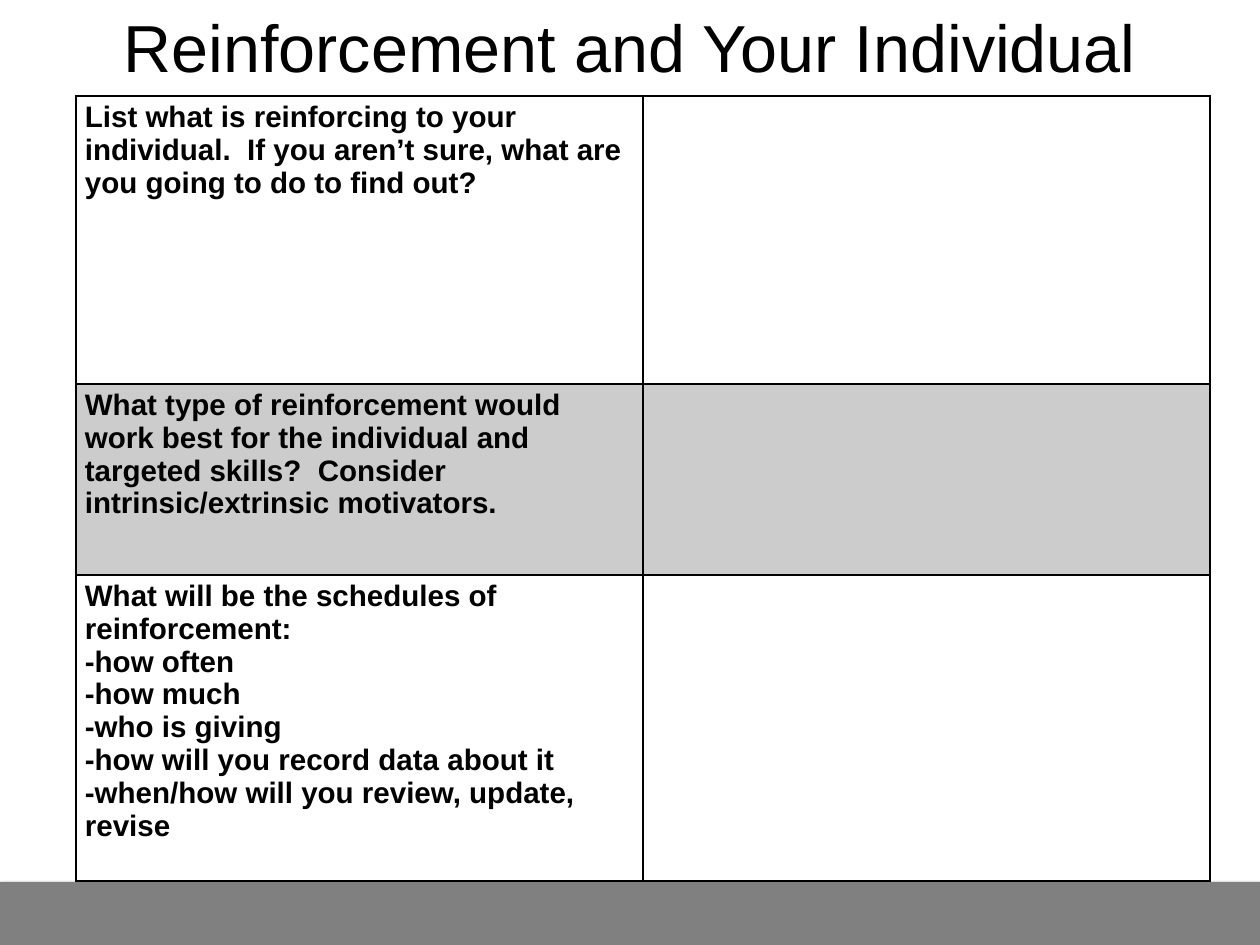
from lxml.etree import SubElement
from pptx import Presentation
from pptx.dml.color import RGBColor
from pptx.enum.shapes import MSO_SHAPE
from pptx.enum.text import MSO_ANCHOR, PP_ALIGN
from pptx.oxml import parse_xml
from pptx.oxml.ns import nsdecls, qn
from pptx.util import Emu, Pt

BLACK = RGBColor(0x00, 0x00, 0x00)
WHITE = RGBColor(0xFF, 0xFF, 0xFF)
GREY = RGBColor(0x80, 0x80, 0x80)
BAND = RGBColor(0xCC, 0xCC, 0xCC)
FONT = "Arial"

HEADING = "Reinforcement and Your Individual"
QUESTIONS = [
    (288, WHITE, ["List what is reinforcing to your individual.  If you aren’t sure, "
                  "what are you going to do to find out?"]),
    (191, BAND, ["What type of reinforcement would work best for the individual and "
                 "targeted skills?  Consider intrinsic/extrinsic motivators."]),
    (306, WHITE, ["What will be the schedules of reinforcement:",
                  "-how often",
                  "-how much",
                  "-who is giving",
                  "-how will you record data about it",
                  "-when/how will you review, update, revise"]),
]
SLIDE_WIDTH, SLIDE_HEIGHT = 1260, 945
FOOTER_TOP = 882
COLUMN_WIDTH = 567


def px(length):
    """Turn pixels into EMU."""
    return Emu(length * 10320)


def style(paragraph, size, bold):
    """Format every run of a paragraph."""
    for run in paragraph.runs:
        run.font.name = FONT
        run.font.size = Pt(size)
        run.font.bold = bold
        run.font.color.rgb = BLACK


def add_borders(cell, widths):
    """Draw the left, right, top and bottom lines of a cell."""
    properties = cell._tc.get_or_add_tcPr()
    for position, (side, width) in enumerate(zip("LRTB", widths)):
        properties.insert(position, parse_xml(
            f'<a:ln{side} {nsdecls("a")} w="{Pt(width)}"><a:solidFill>'
            f'<a:srgbClr val="{BLACK}"/></a:solidFill></a:ln{side}>'))


def add_footer(slide):
    """Add the grey bar with its soft shadow."""
    footer = slide.shapes.add_shape(
        MSO_SHAPE.RECTANGLE, 0, px(FOOTER_TOP), px(SLIDE_WIDTH),
        px(SLIDE_HEIGHT - FOOTER_TOP))
    footer.fill.solid()
    footer.fill.fore_color.rgb = GREY
    footer.line.fill.background()
    footer.shadow.inherit = False
    effects = footer._element.spPr.find(qn("a:effectLst"))
    shadow = SubElement(effects, qn("a:outerShdw"), blurRad=str(Pt(3.1)),
                        dist=str(Pt(1.8)), dir="5400000", rotWithShape="0")
    tint = SubElement(shadow, qn("a:srgbClr"), val=str(BLACK))
    SubElement(tint, qn("a:alpha"), val="35000")


def add_heading(slide):
    """Place the title."""
    heading = slide.shapes.title
    heading.left, heading.top = px(32), px(0)
    heading.width, heading.height = px(1196), px(92)
    frame = heading.text_frame
    frame.text = HEADING
    frame.word_wrap = True
    frame.vertical_anchor = MSO_ANCHOR.MIDDLE
    frame.margin_left = frame.margin_right = px(4)
    frame.margin_top = frame.margin_bottom = px(4)
    frame.paragraphs[0].alignment = PP_ALIGN.CENTER
    style(frame.paragraphs[0], 54, False)


def add_worksheet(slide):
    """Build the question table with its empty answer column."""
    total = sum(height for height, _, _ in QUESTIONS)
    worksheet = slide.shapes.add_table(
        len(QUESTIONS), 2, px(76), px(96), px(2 * COLUMN_WIDTH), px(total)).table
    worksheet.first_row = False
    worksheet.horz_banding = False
    for index, (height, shade, lines) in enumerate(QUESTIONS):
        worksheet.rows[index].height = px(height)
        question = worksheet.cell(index, 0)
        question.text = "\n".join(lines)
        for paragraph in question.text_frame.paragraphs:
            style(paragraph, 24, True)
        for cell in worksheet.rows[index].cells:
            cell.fill.solid()
            cell.fill.fore_color.rgb = shade
            add_borders(cell, (1, 1, 2 if index == 1 else 1, 2 if index == 0 else 1))


def main():
    """Build and save the slide."""
    deck = Presentation()
    deck.slide_width, deck.slide_height = px(SLIDE_WIDTH), px(SLIDE_HEIGHT)
    slide = deck.slides.add_slide(deck.slide_layouts[5])
    add_footer(slide)
    add_heading(slide)
    add_worksheet(slide)
    deck.save("out.pptx")


if __name__ == "__main__":
    main()
